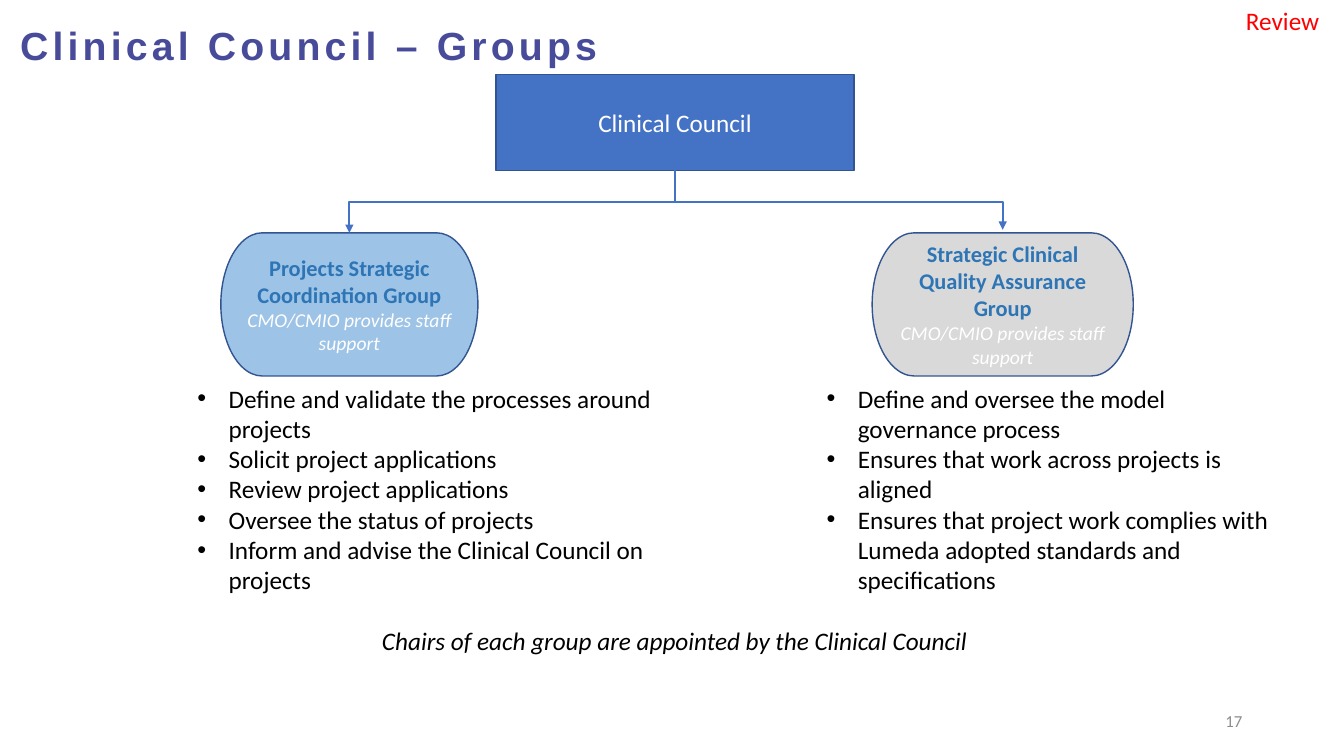
from lxml import etree
from pptx import Presentation
from pptx import util as u
from pptx.dml.color import RGBColor
from pptx.enum import shapes, text
from pptx.oxml.ns import qn

COLORS = {
    "title": "484B99", "council": "4472C4", "edge": "325491",
    "projects": "9DC3E6", "quality": "D9D9D9", "group": "2E75B6",
    "white": "FFFFFF", "black": "000000", "number": "8C8C8C", "review": "FF0000",
}
STAFF = "CMO/CMIO provides staff support"
LEFT, CENTER, RIGHT = text.PP_ALIGN.LEFT, text.PP_ALIGN.CENTER, text.PP_ALIGN.RIGHT
TOP, MIDDLE = text.MSO_ANCHOR.TOP, text.MSO_ANCHOR.MIDDLE

# Name, fill, box of the group; duties and their box
GROUPS = [
    ("Projects Strategic Coordination Group", "projects", (2.19, 2.31, 2.55, 1.42),
     ["Define and validate the processes around projects",
      "Solicit project applications",
      "Review project applications",
      "Oversee the status of projects",
      "Inform and advise the Clinical Council on projects"],
     (1.86, 3.75, 4.73, 3.11)),
    ("Strategic Clinical Quality Assurance Group", "quality", (8.65, 2.31, 2.59, 1.42),
     ["Define and oversee the model governance process",
      "Ensures that work across projects is aligned",
      "Ensures that project work complies with Lumeda adopted standards and specifications"],
     (8.1, 3.75, 4.64, 3.19)),
]


def rgb(name):
    return RGBColor.from_string(COLORS[name])


def inches(box):
    return [u.Inches(n) for n in box]


def add_text(p, words, size=18, color="black", font="Calibri", bold=False,
             italic=False, align=LEFT, bullet=False):
    """Write one formatted run into a paragraph."""
    p.alignment = align
    if bullet:
        pPr = p._p.get_or_add_pPr()
        pPr.set("marL", str(u.Inches(0.31)))
        pPr.set("indent", str(-u.Inches(0.31)))
        etree.SubElement(pPr, qn("a:buFont"), typeface="Arial")
        etree.SubElement(pPr, qn("a:buChar"), char="•")
    r = p.add_run()
    r.text = words
    f = r.font
    f.name, f.size, f.bold, f.italic = font, u.Pt(size), bold, italic
    f.color.rgb = rgb(color)
    return r


def add_box(s, box, lines, wrap=True, anchor=TOP, **fmt):
    """Place a text box with one paragraph per line."""
    tf = s.shapes.add_textbox(*inches(box)).text_frame
    tf.word_wrap, tf.vertical_anchor = wrap, anchor
    for i, line in enumerate(lines):
        add_text(tf.add_paragraph() if i else tf.paragraphs[0], line, **fmt)


def add_node(s, kind, box, fill):
    """Place a filled, outlined shape and return its text frame."""
    sp = s.shapes.add_shape(kind, *inches(box))
    sp.shadow.inherit = False
    sp.fill.solid()
    sp.fill.fore_color.rgb = rgb(fill)
    sp.line.color.rgb = rgb("edge")
    sp.line.width = u.Pt(1)
    tf = sp.text_frame
    tf.word_wrap, tf.vertical_anchor = True, MIDDLE
    return tf


def add_elbow(s, box, preset, turn=0):
    """Place a bent arrow in its unrotated box, turned clockwise by degrees."""
    x, y, w, h = box
    cx = s.shapes.add_connector(shapes.MSO_CONNECTOR.ELBOW, *inches((x, y, x + w, y + h)))
    cx.line.color.rgb = rgb("council")
    cx.line.width = u.Pt(1.5)
    spPr = cx._element.spPr
    spPr.find(qn("a:prstGeom")).set("prst", preset)
    spPr.find(qn("a:xfrm")).set("rot", str(turn * 60000))
    etree.SubElement(spPr.find(qn("a:ln")), qn("a:tailEnd"), type="triangle")
    etree.SubElement(spPr, qn("a:effectLst"))


def add_title(s, box):
    sp = s.shapes.title
    sp.left, sp.top, sp.width, sp.height = inches(box)
    tf = sp.text_frame
    tf.vertical_anchor = MIDDLE
    p = tf.paragraphs[0]
    p.line_spacing = 0.9
    r = add_text(p, "Clinical Council – Groups", size=28, color="title",
                 font="Arial", bold=True)
    r.font._element.set("spc", "300")


def add_council(s, box):
    tf = add_node(s, shapes.MSO_SHAPE.RECTANGLE, box, "council")
    add_text(tf.paragraphs[0], "Clinical Council", color="white", align=CENTER)


def add_group(s, name, fill, box, duties, duties_box):
    tf = add_node(s, shapes.MSO_SHAPE.FLOWCHART_TERMINATOR, box, fill)
    add_text(tf.paragraphs[0], name, size=16, color="group", bold=True, align=CENTER)
    add_text(tf.add_paragraph(), STAFF, size=14, color="white", italic=True, align=CENTER)
    add_box(s, duties_box, duties, bullet=True)


def add_arrows(s, council, left, right):
    """Lead from the bottom of the council to the top of both groups."""
    mid, bottom = council[0] + council[2] / 2, council[1] + council[3]
    left_mid, right_mid = (b[0] + b[2] / 2 for b in (left, right))
    drop, span = left[1] - bottom, mid - left_mid
    bar = bottom + drop / 2
    add_elbow(s, (mid, bar, right_mid - mid, 0.28), "bentConnector2")
    add_elbow(s, ((mid + left_mid - drop) / 2, bar - span / 2, drop, span),
              "bentConnector3", turn=90)


def main():
    prs = Presentation()
    prs.slide_width, prs.slide_height = u.Inches(13.33), u.Inches(7.5)
    s = prs.slides.add_slide(prs.slide_layouts[5])

    # Title and slide number
    add_title(s, (0.1, -0.09, 11.5, 1.13))
    add_box(s, (9.42, 6.95, 3, 0.4), ["17"], anchor=MIDDLE, size=12,
            color="number", align=RIGHT)

    # Council, its groups and the arrows between them
    council = (4.92, 0.74, 3.55, 0.95)
    add_council(s, council)
    for group in GROUPS:
        add_group(s, *group)
    add_arrows(s, council, *(group[2] for group in GROUPS))

    # Remarks
    add_box(s, (3.69, 6.15, 6.11, 0.4),
            ["Chairs of each group are appointed by the Clinical Council"],
            wrap=False, italic=True)
    add_box(s, (12.26, 0, 0.97, 0.4), ["Review"], color="review")

    prs.save("out.pptx")


if __name__ == "__main__":
    main()
